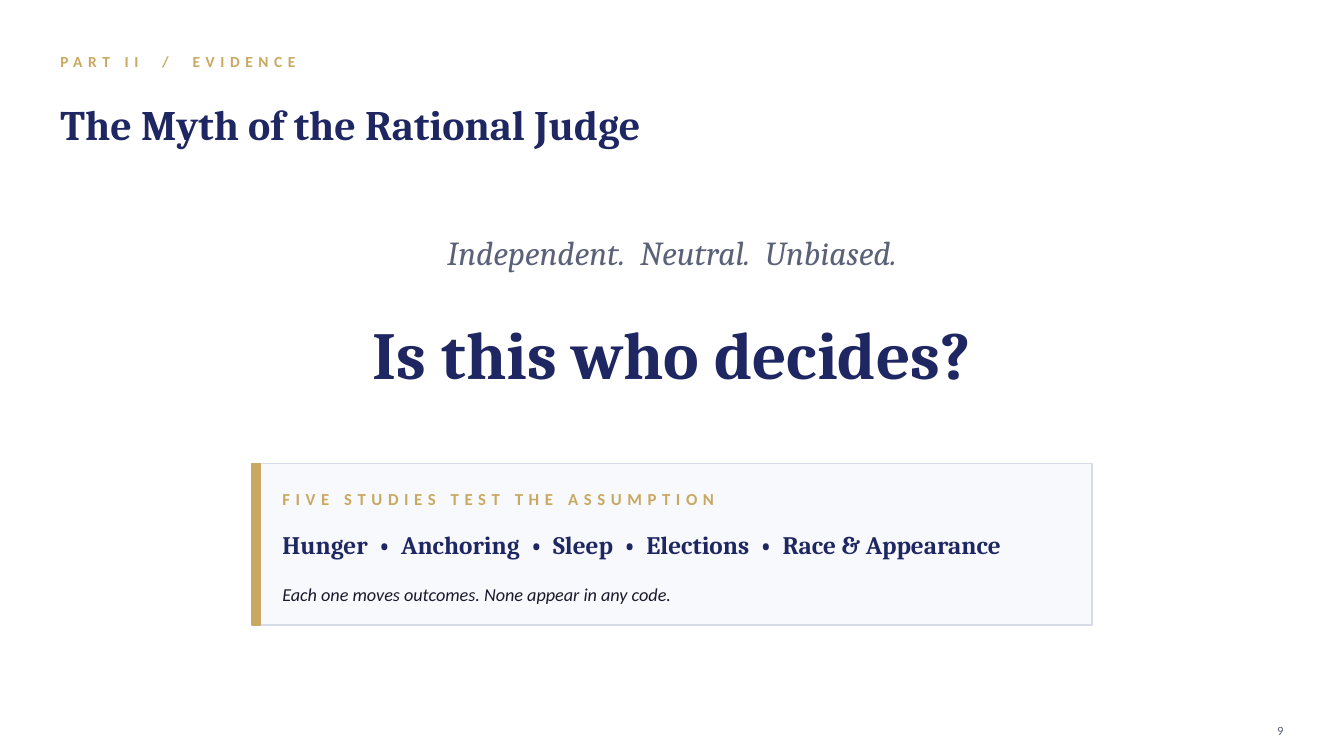
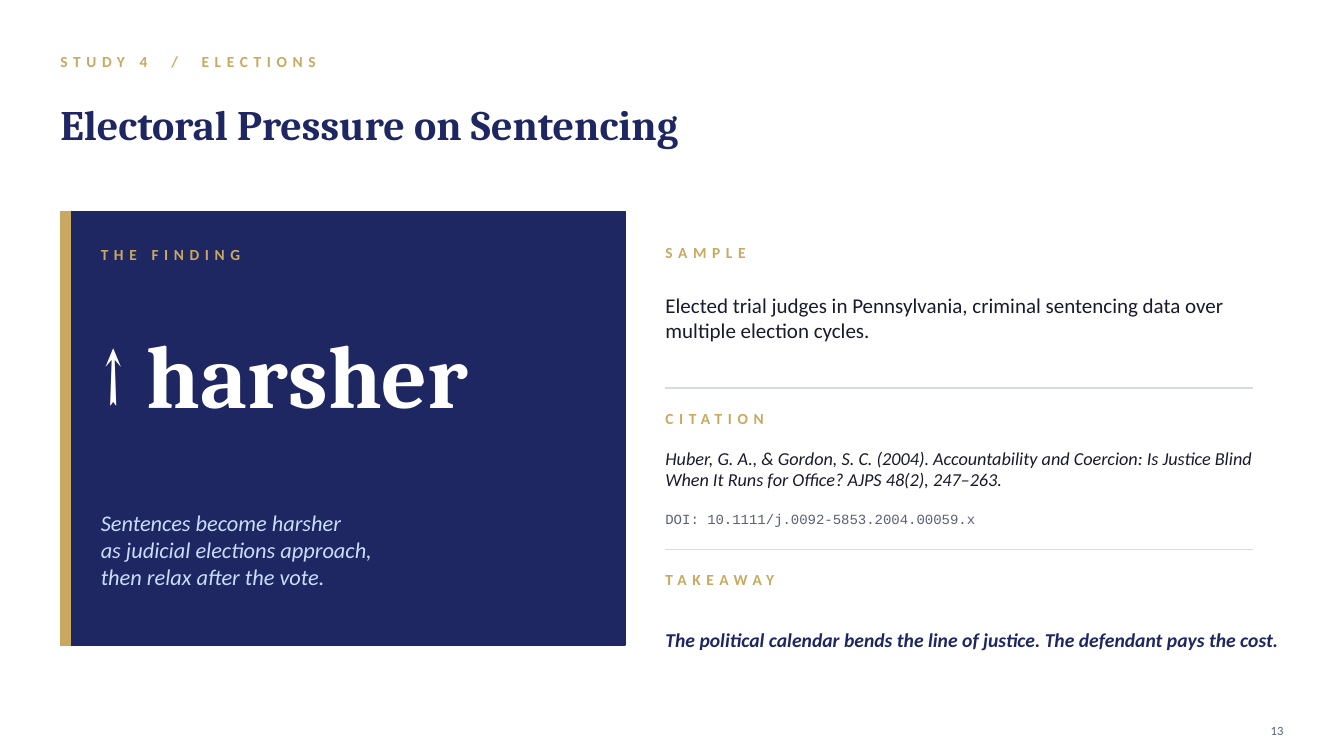
from dataclasses import dataclass, replace

from lxml.etree import SubElement
from pptx import Presentation
from pptx.dml.color import RGBColor
from pptx.enum.shapes import MSO_CONNECTOR as Connector, MSO_SHAPE as Shape
from pptx.enum.text import MSO_ANCHOR as Anchor, PP_ALIGN as Align
from pptx.oxml.ns import qn
from pptx.util import Inches, Pt

CELL = Inches(0.1)
COLUMNS, ROWS = 133.3, 75
MARGIN = 6
CONTENT = COLUMNS - 2 * MARGIN

NAVY, GOLD, WHITE = "1E2761", "C9A961", "FFFFFF"
INK, SLATE, ICE = "1A1A2E", "5A6178", "CADCFC"
PALE, RULE = "F8F9FC", "D6DBE7"


@dataclass(frozen=True)
class Style:
    size: int
    color: str
    font: str = "Calibri"
    bold: bool = False
    italic: bool = False
    align: Align = Align.LEFT
    tracking: int = 0


LABEL = Style(11, GOLD, bold=True, tracking=4)
TITLE = Style(30, NAVY, "Cambria", bold=True)
LEAD = Style(24, SLATE, "Cambria", italic=True, align=Align.CENTER)
QUESTION = replace(TITLE, size=48, align=Align.CENTER)
TOPICS = replace(TITLE, size=18)
FINDING = replace(TITLE, size=64, color=WHITE)
EXPLANATION = Style(16, ICE, italic=True)
BODY = Style(15, INK)
REMARK = Style(13, INK, italic=True)
TAKEAWAY = Style(14, NAVY, bold=True, italic=True)
CODE = Style(10, SLATE, "Courier New")
PAGE_NUMBER = Style(9, SLATE, align=Align.RIGHT)


def rgb(color):
    return RGBColor.from_string(color)


def cells(*counts):
    return [round(count * CELL) for count in counts]


def format_run(run, style):
    font = run.font
    font.size, font.name = Pt(style.size), style.font
    font.bold, font.italic = style.bold, style.italic
    font.color.rgb = rgb(style.color)
    if style.tracking:
        run._r.get_or_add_rPr().set("spc", str(style.tracking * 100))


def add_text(slide, text, style, left, top, width, height):
    text_frame = slide.shapes.add_textbox(*cells(left, top, width, height)).text_frame
    text_frame.word_wrap = True
    text_frame.vertical_anchor = Anchor.MIDDLE
    text_frame.margin_left = text_frame.margin_right = 0
    text_frame.margin_top = text_frame.margin_bottom = 0
    text_frame.text = text
    for paragraph in text_frame.paragraphs:
        paragraph.alignment = style.align
        for run in paragraph.runs:
            format_run(run, style)


def add_rectangle(slide, fill, line, left, top, width, height):
    shape = slide.shapes.add_shape(Shape.RECTANGLE, *cells(left, top, width, height))
    shape.shadow.inherit = False
    shape.fill.solid()
    shape.fill.fore_color.rgb = rgb(fill)
    shape.line.color.rgb = rgb(line)
    shape.line.width = Pt(1)


def add_panel(slide, fill, line, left, top, width, height, accent):
    add_rectangle(slide, fill, line, left, top, width, height)
    add_rectangle(slide, GOLD, GOLD, left, top, accent, height)


def add_rule(slide, left, top, width):
    rule = slide.shapes.add_connector(
        Connector.STRAIGHT, *cells(left, top, left + width, top))
    rule.line.color.rgb = rgb(RULE)
    rule.line.width = Pt(1)
    SubElement(rule._element.spPr, qn("a:effectLst"))


def add_slide(presentation, eyebrow, title, number):
    slide = presentation.slides.add_slide(presentation.slide_layouts[6])
    add_text(slide, eyebrow, LABEL, MARGIN, 4.5, CONTENT, 3.2)
    add_text(slide, title, TITLE, MARGIN, 7.8, CONTENT, 9)
    add_text(slide, str(number), PAGE_NUMBER, COLUMNS - MARGIN - 5, ROWS - 4, 5, 3)
    return slide


def build_myth(presentation):
    slide = add_slide(presentation, "PART II  /  EVIDENCE",
                      "The Myth of the Rational Judge", 9)
    add_text(slide, "Independent.  Neutral.  Unbiased.", LEAD, MARGIN, 22, CONTENT, 6)
    add_text(slide, "Is this who decides?", QUESTION, MARGIN, 30, CONTENT, 10)

    left, padding = 25, 3
    width = COLUMNS - 2 * left
    add_panel(slide, PALE, RULE, left, 46, width, 16, accent=0.8)
    lines = [
        ("FIVE STUDIES TEST THE ASSUMPTION", replace(LABEL, size=12), 47.5, 4),
        ("Hunger  •  Anchoring  •  Sleep  •  Elections  •  Race & Appearance",
         TOPICS, 51.5, 5),
        ("Each one moves outcomes. None appear in any code.", REMARK, 57, 4),
    ]
    for text, style, top, height in lines:
        add_text(slide, text, style, left + padding, top, width - 2 * padding, height)


def add_finding(slide, finding, explanation):
    add_panel(slide, NAVY, NAVY, MARGIN, 21, 56, 43, accent=1)
    left, width = MARGIN + 4, 50
    add_text(slide, "THE FINDING", LABEL, left, 23.5, width, 3.5)
    add_text(slide, finding, FINDING, left, 28, width, 18)
    add_text(slide, explanation, EXPLANATION, left, 47, width, 15)


def add_section(slide, label, text, style, left, top, height, ruled=True):
    width = COLUMNS - MARGIN - left
    if ruled:
        add_rule(slide, left, top - 1.5, width - 3)
    add_text(slide, label, LABEL, left, top, width, 3)
    add_text(slide, text, style, left, top + 3, width, height)


def build_elections(presentation):
    slide = add_slide(presentation, "STUDY 4  /  ELECTIONS",
                      "Electoral Pressure on Sentencing", 13)
    add_finding(slide, "↑ harsher",
                "Sentences become harsher\n"
                "as judicial elections approach,\n"
                "then relax after the vote.")

    left = 66
    add_section(slide, "SAMPLE",
                "Elected trial judges in Pennsylvania, criminal sentencing data "
                "over multiple election cycles.",
                BODY, left, 23.5, 10, ruled=False)
    add_section(slide, "CITATION",
                "Huber, G. A., & Gordon, S. C. (2004). Accountability and Coercion: "
                "Is Justice Blind When It Runs for Office? AJPS 48(2), 247–263.",
                REMARK, left, 40, 7)
    add_text(slide, "DOI: 10.1111/j.0092-5853.2004.00059.x", CODE,
             left, 50, COLUMNS - MARGIN - left, 3)
    add_section(slide, "TAKEAWAY",
                "The political calendar bends the line of justice. "
                "The defendant pays the cost.",
                TAKEAWAY, left, 56, 9)


def main():
    presentation = Presentation()
    presentation.slide_width, presentation.slide_height = cells(COLUMNS, ROWS)
    build_myth(presentation)
    build_elections(presentation)
    presentation.save("out.pptx")


if __name__ == "__main__":
    main()
